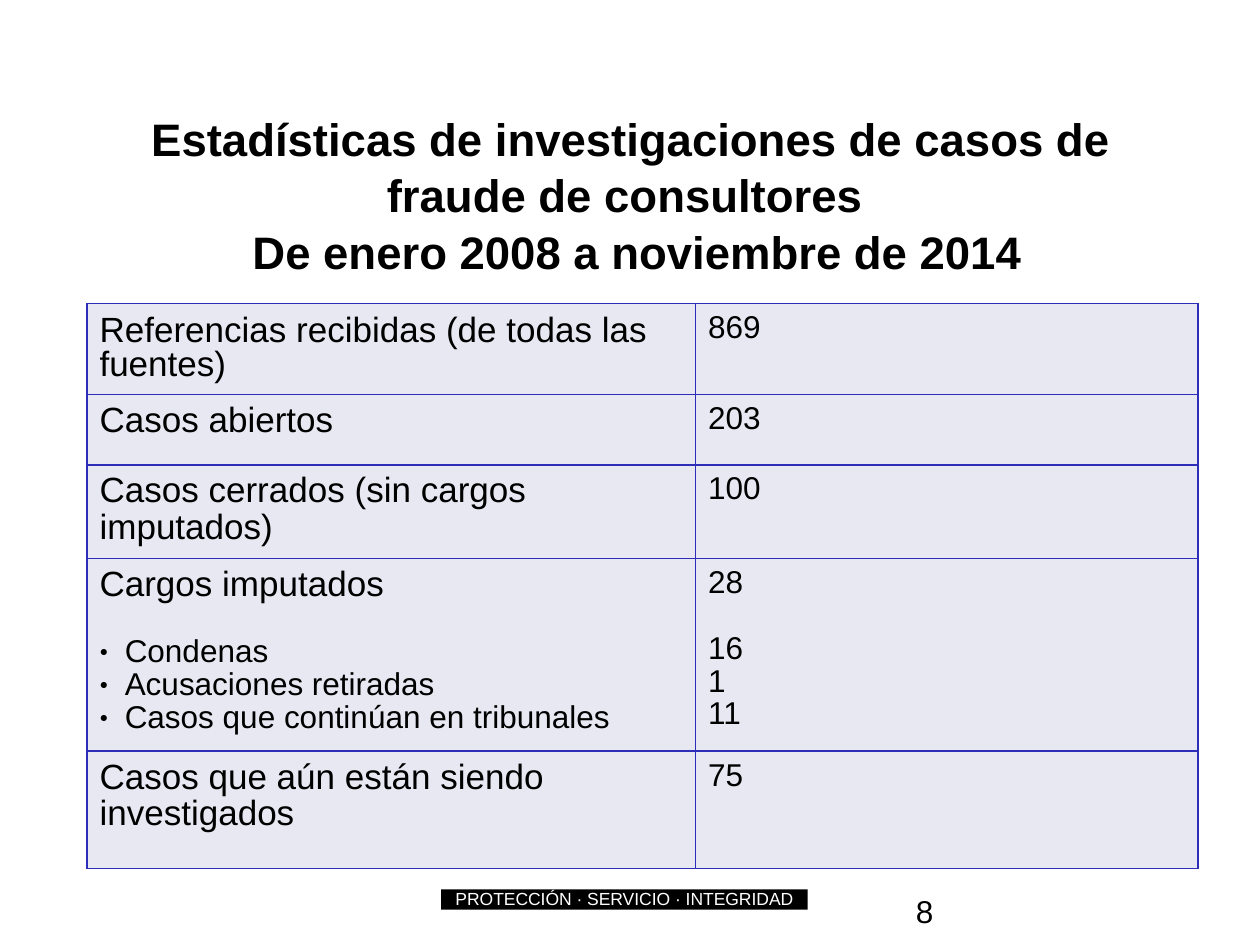
import pptx
import pptx.util
import pptx.dml.color
import pptx.enum.shapes
import pptx.enum.text
import pptx.oxml
import pptx.oxml.ns
from dataclasses import dataclass
from pptx.util import Inches


@dataclass(frozen=True)
class Theme:
    font: str = "Arial"
    ink: str = "000000"
    paper: str = "FFFFFF"
    cell: str = "E8E8F3"
    border: str = "2D2DB9"
    title_size: int = 26
    label_size: int = 20
    value_size: int = 18
    footer_size: int = 10
    border_width: int = 1


THEME = Theme()
TITLE = (
    "Estadísticas de investigaciones de casos de fraude de consultores \v"
    " De enero 2008 a noviembre de 2014"
)
COLUMN_WIDTHS = (4.83, 3.99)
# Row height, line spacing, label, value, then (label, value) details
ROWS = (
    (0.65, 0.87, "Referencias recibidas (de todas las fuentes)", "869", ()),
    (0.56, 0.93, "Casos abiertos", "203", ()),
    (0.56, 0.93, "Casos cerrados (sin cargos imputados)", "100", ()),
    (1.32, 0.93, "Cargos imputados", "28", (
        ("Condenas", "16"),
        ("Acusaciones retiradas", "1"),
        ("Casos que continúan en tribunales", "11"),
    )),
    (0.93, 0.93, "Casos que aún están siendo investigados", "75", ()),
)


def color(value):
    return pptx.dml.color.RGBColor.from_string(value)


def set_attributes(target, values):
    for name, value in values.items():
        setattr(target, name, value)


def set_margins(target, left, top, right, bottom):
    set_attributes(target, {
        "margin_left": Inches(left), "margin_top": Inches(top),
        "margin_right": Inches(right), "margin_bottom": Inches(bottom),
    })


def write_paragraph(paragraph, text, size, ink=THEME.ink, bold=False, **layout):
    paragraph.text = text
    set_attributes(paragraph, layout)
    set_attributes(paragraph.font, {
        "name": THEME.font, "size": pptx.util.Pt(size), "bold": bold,
    })
    paragraph.font.color.rgb = color(ink)


def add_text(slide, box, text, size, **layout):
    frame = slide.shapes.add_textbox(*map(Inches, box)).text_frame
    frame.word_wrap = True
    set_margins(frame, 0.1, 0.1, 0.1, 0.05)
    write_paragraph(frame.paragraphs[0], text, size, **layout)


def add_bullet(paragraph):
    properties = paragraph._p.get_or_add_pPr()
    properties.set("marL", str(Inches(0.2)))
    properties.set("indent", str(-Inches(0.2)))
    namespace = pptx.oxml.ns.nsdecls("a")
    for markup in (
        f'<a:buClr {namespace}><a:srgbClr val="{THEME.ink}"/></a:buClr>',
        f'<a:buSzPct {namespace} val="45000"/>',
        f'<a:buFont {namespace} typeface="{THEME.font}"/>',
        f'<a:buChar {namespace} char="●"/>',
    ):
        properties.append(pptx.oxml.parse_xml(markup))


def style_cell(cell, top_margin):
    set_margins(cell, 0.1, top_margin, 0.1, 0.05)
    properties = cell._tc.get_or_add_tcPr()
    width = pptx.util.Pt(THEME.border_width)
    for side in ("lnL", "lnR", "lnT", "lnB"):
        properties.append(pptx.oxml.parse_xml(
            f'<a:{side} {pptx.oxml.ns.nsdecls("a")} w="{width}"><a:solidFill>'
            f'<a:srgbClr val="{THEME.border}"/></a:solidFill></a:{side}>'
        ))
    cell.fill.solid()
    cell.fill.fore_color.rgb = color(THEME.cell)


def fill_cell(cell, heading, heading_size, details, spacing, bulleted):
    frame = cell.text_frame
    write_paragraph(frame.paragraphs[0], heading, heading_size, line_spacing=spacing)
    for index, detail in enumerate(details):
        paragraph = frame.add_paragraph()
        if bulleted:
            add_bullet(paragraph)
        gap = pptx.util.Pt(19 if index == 0 else 0)
        write_paragraph(paragraph, detail, THEME.value_size,
                        line_spacing=spacing, space_before=gap)


def add_statistics(slide, box):
    table = slide.shapes.add_table(
        len(ROWS), len(COLUMN_WIDTHS), *map(Inches, box)).table
    set_attributes(table, {"first_row": False, "horz_banding": False})
    for column, width in zip(table.columns, COLUMN_WIDTHS):
        column.width = Inches(width)
    for index, (height, spacing, label, value, details) in enumerate(ROWS):
        table.rows[index].height = Inches(height)
        label_cell, value_cell = table.rows[index].cells
        style_cell(label_cell, 0.09 if index == 0 else 0.07)
        style_cell(value_cell, 0.08 if index == 0 else 0.07)
        fill_cell(label_cell, label, THEME.label_size,
                  [name for name, _ in details], spacing, True)
        fill_cell(value_cell, value, THEME.value_size,
                  [count for _, count in details], spacing, False)


def add_motto(slide, box):
    shape = slide.shapes.add_shape(
        pptx.enum.shapes.MSO_SHAPE.RECTANGLE, *map(Inches, box))
    shape.shadow.inherit = False
    shape.fill.solid()
    shape.fill.fore_color.rgb = color(THEME.ink)
    shape.line.fill.background()
    frame = shape.text_frame
    set_margins(frame, 0, 0, 0, 0)
    frame.vertical_anchor = pptx.enum.text.MSO_ANCHOR.MIDDLE
    write_paragraph(frame.paragraphs[0], "PROTECCIÓN · SERVICIO · INTEGRIDAD",
                    THEME.footer_size, THEME.paper, line_spacing=0.93,
                    alignment=pptx.enum.text.PP_ALIGN.CENTER)


def main():
    presentation = pptx.Presentation()
    presentation.slide_width = Inches(10)
    presentation.slide_height = Inches(7.5)
    slide = presentation.slides.add_slide(presentation.slide_layouts[6])
    add_text(slide, (0.51, 0.76, 9, 1.42), TITLE, THEME.title_size, bold=True,
             line_spacing=1.04, alignment=pptx.enum.text.PP_ALIGN.CENTER)
    add_text(slide, (7.17, 6.98, 2.33, 0.52), "8", THEME.value_size)
    add_statistics(slide, (0.69, 2.41, sum(COLUMN_WIDTHS), sum(row[0] for row in ROWS)))
    add_motto(slide, (3.5, 7.06, 2.91, 0.16))
    presentation.save("out.pptx")


if __name__ == "__main__":
    main()
